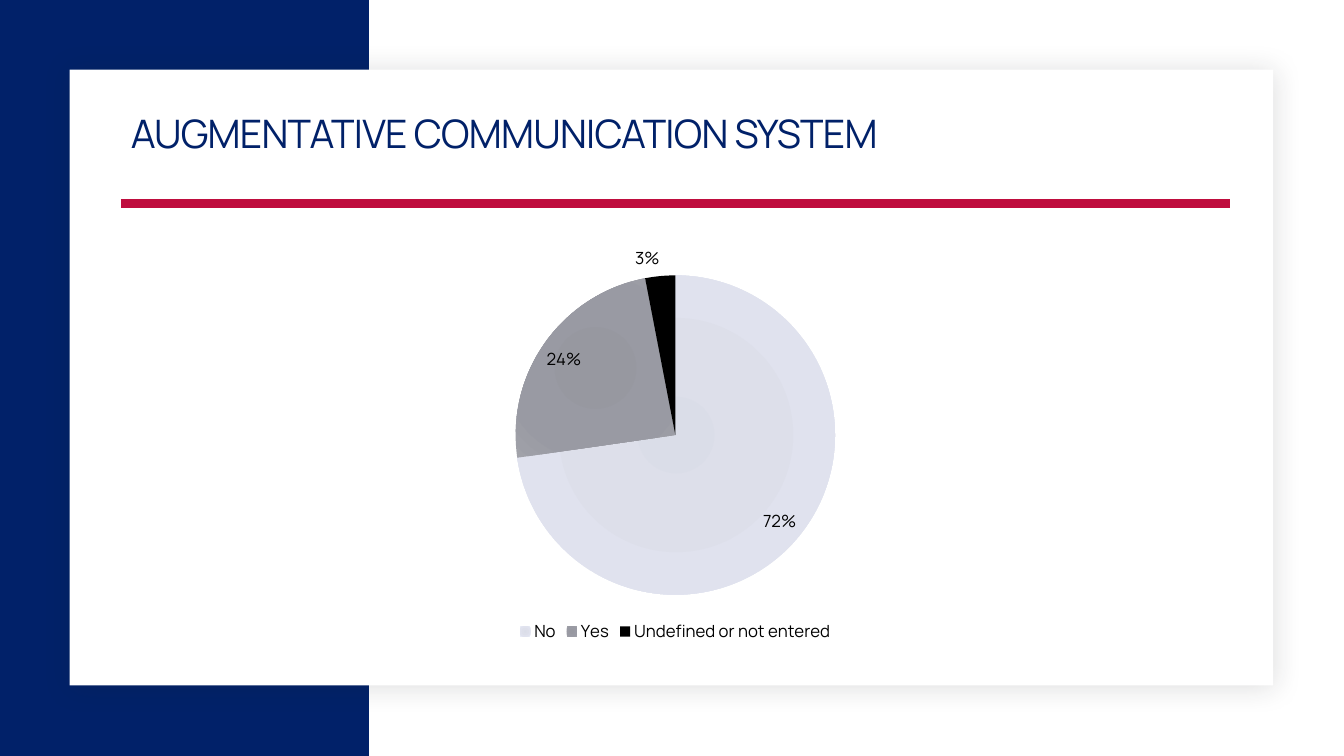
"""Build the augmentative communication system slide with its pie chart."""
from dataclasses import dataclass

from pptx import Presentation
from pptx.chart.data import CategoryChartData
from pptx.dml.color import RGBColor
from pptx.enum.chart import XL_CHART_TYPE as CHART
from pptx.enum.chart import XL_LABEL_POSITION as LABEL
from pptx.enum.chart import XL_LEGEND_POSITION as LEGEND
from pptx.enum.shapes import MSO_CONNECTOR as CONN
from pptx.enum.shapes import MSO_SHAPE as SHAPE
from pptx.enum.text import MSO_ANCHOR as ANCHOR
from pptx.oxml import parse_xml
from pptx.oxml.ns import nsdecls
from pptx.util import Pt

FONT = "Manrope"
NAVY, RED, WHITE, BLACK = "012169", "BF0D3E", "FFFFFF", "000000"
STOPS = (0, 34, 70, 100)


@dataclass
class Block:
    x: float
    y: float
    w: float
    h: float
    fill: str
    shadow: bool = False


@dataclass
class Slice:
    name: str
    value: int
    colors: tuple[str, ...]


BLOCKS = [
    Block(0, 0, 263.5, 540, NAVY),
    Block(49.7, 49.7, 859.7, 439.9, WHITE, shadow=True),
]
SLICES = [
    Slice("No", 72, ("DADDE8", "DDDFEA", "E0E2EE", "EBEEF8")),
    Slice("Yes", 24, ("95969F", "9798A0", "999AA3", "A1A2A9")),
    Slice("Undefined or not entered", 3, (BLACK,)),
]


def rgb(color: str) -> RGBColor:
    return RGBColor.from_string(color)


def style_font(font, size: float, color: str) -> None:
    font.name, font.size = FONT, Pt(size)
    font.color.rgb = rgb(color)


def add_block(s, b: Block) -> None:
    sp = s.shapes.add_shape(SHAPE.RECTANGLE, Pt(b.x), Pt(b.y), Pt(b.w), Pt(b.h))
    sp.fill.solid()
    sp.fill.fore_color.rgb = rgb(b.fill)
    sp.line.fill.background()
    sp.shadow.inherit = False
    if b.shadow:
        sp._element.spPr.xpath("a:effectLst")[0].append(parse_xml(
            f'<a:outerShdw {nsdecls("a")} blurRad="{Pt(20)}" dist="{Pt(2)}" '
            'dir="2700000" algn="tl" rotWithShape="0"><a:srgbClr val="1F2125">'
            '<a:alpha val="15000"/></a:srgbClr></a:outerShdw>'))


def add_rule(s, x1: float, x2: float, y: float, color: str, width: float) -> None:
    ln = s.shapes.add_connector(CONN.STRAIGHT, Pt(x1), Pt(y), Pt(x2), Pt(y))
    ln.line.color.rgb = rgb(color)
    ln.line.width = Pt(width)
    ln._element.spPr.append(parse_xml(f'<a:effectLst {nsdecls("a")}/>'))


def add_text(s, text: str, *, x: float, y: float, w: float, h: float,
             size: float, color: str, spacing: float = 0, leading: float = 1) -> None:
    tf = s.shapes.add_textbox(Pt(x), Pt(y), Pt(w), Pt(h)).text_frame
    tf.word_wrap = True
    tf.vertical_anchor = ANCHOR.MIDDLE
    p = tf.paragraphs[0]
    p.line_spacing = leading
    r = p.add_run()
    r.text = text
    style_font(r.font, size, color)
    r.font._element.set("spc", str(round(spacing * 100)))


def radial_fill(colors: tuple[str, ...]):
    stops = "".join(f'<a:gs pos="{pos * 1000}"><a:srgbClr val="{c}"/></a:gs>'
                    for pos, c in zip(STOPS, colors))
    return parse_xml(
        f'<a:gradFill {nsdecls("a")}><a:gsLst>{stops}</a:gsLst><a:path path="circle">'
        '<a:fillToRect l="100000" t="100000" r="100000" b="100000"/>'
        '</a:path></a:gradFill>')


def add_pie(s, slices: list[Slice], x: float, y: float, w: float, h: float) -> None:
    data = CategoryChartData()
    data.categories = [sl.name for sl in slices]
    data.add_series("Series 1", [sl.value for sl in slices])
    chart = s.shapes.add_chart(CHART.PIE, Pt(x), Pt(y), Pt(w), Pt(h), data).chart
    style_font(chart.font, 10, BLACK)
    chart.has_title = False
    chart.has_legend = True
    chart.legend.position = LEGEND.BOTTOM
    chart.legend.include_in_layout = False
    style_font(chart.legend.font, 12, BLACK)

    plot = chart.plots[0]
    plot.vary_by_categories = True
    ser = plot.series[0]
    for i, sl in enumerate(slices):
        fmt = ser.points[i].format
        fmt.fill.solid()
        fmt.fill.fore_color.rgb = rgb(sl.colors[0])
        fmt.line.fill.background()
        if len(sl.colors) > 1:
            solid = ser._element.xpath("c:dPt/c:spPr/a:solidFill")[-1]
            solid.getparent().replace(solid, radial_fill(sl.colors))

    labels = ser.data_labels
    labels.show_value = True
    labels.number_format = '0"%"'
    labels.number_format_is_linked = False
    labels.position = LABEL.BEST_FIT
    style_font(labels.font, 12, BLACK)


def main() -> None:
    prs = Presentation()
    prs.slide_width, prs.slide_height = Pt(960), Pt(540)
    s = prs.slides.add_slide(prs.slide_layouts[6])
    for block in BLOCKS:
        add_block(s, block)
    add_rule(s, 86.4, 878.4, 145.4, RED, 6)
    add_text(s, "AUGMENTATIVE COMMUNICATION SYSTEM", x=86.4, y=74.2, w=792, h=46.1,
             size=28, color=NAVY, spacing=-0.5, leading=0.9)
    add_pie(s, SLICES, 86.4, 166.3, 792, 295.9)
    prs.save("out.pptx")


if __name__ == "__main__":
    main()
